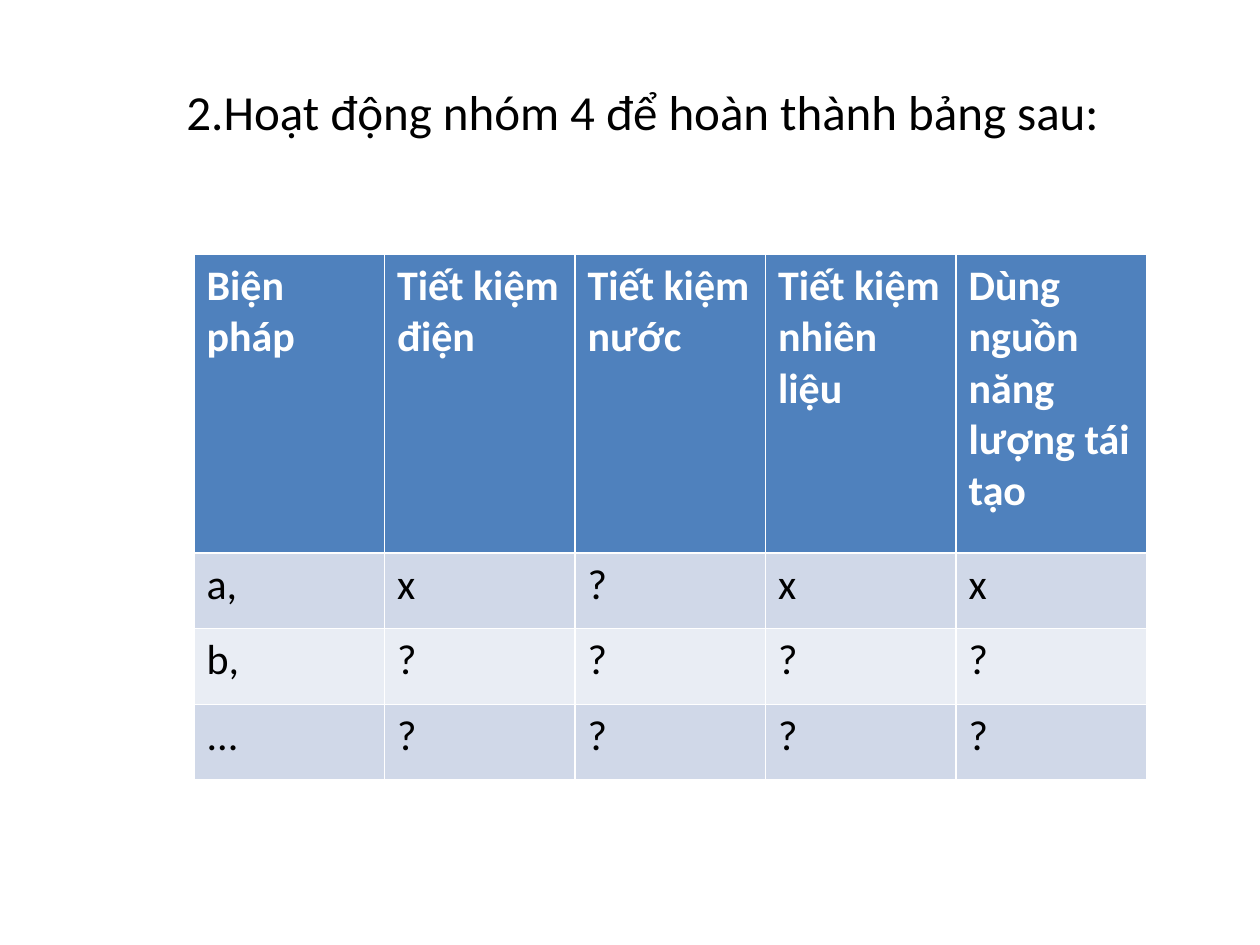
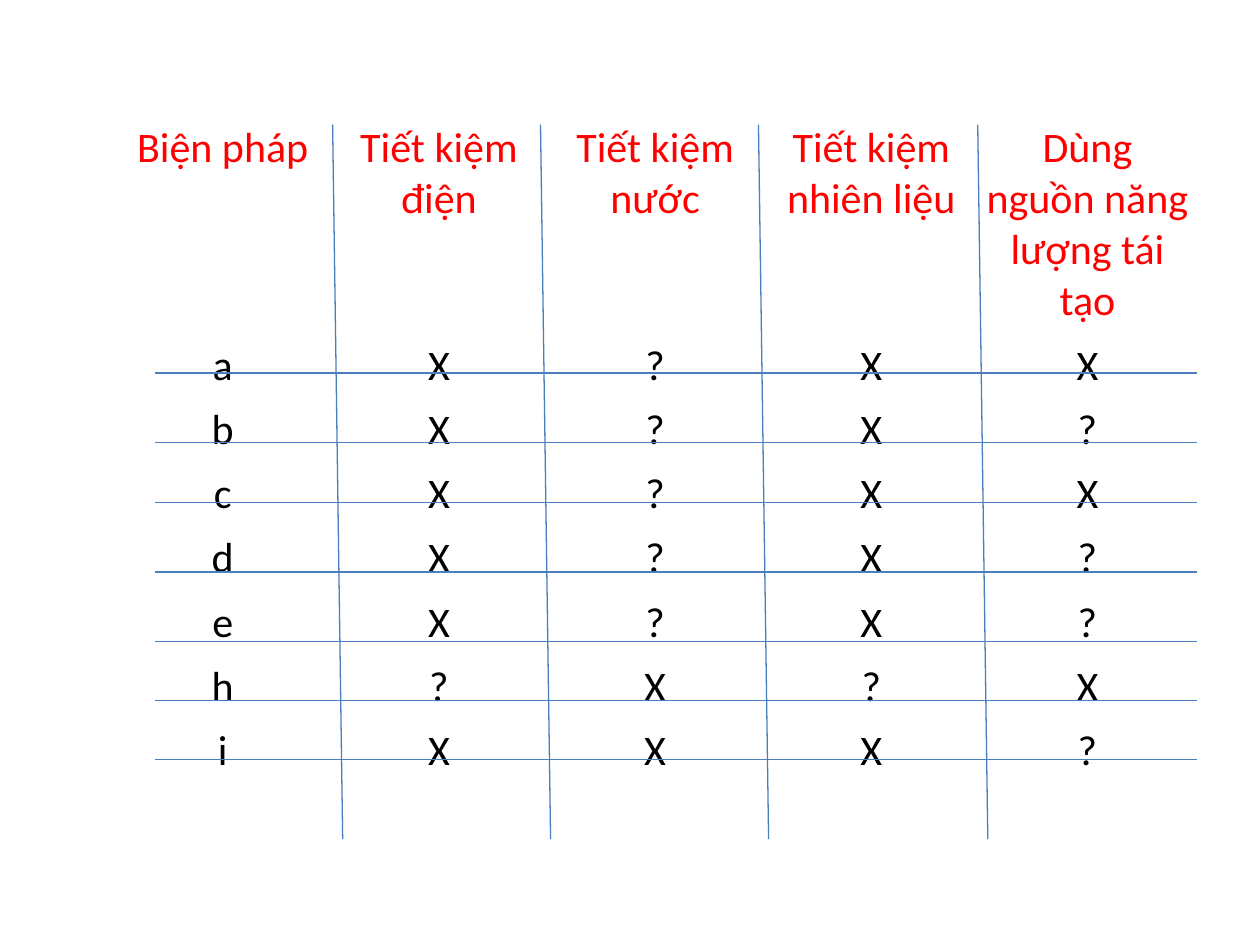
from dataclasses import dataclass
from typing import Any

import lxml.etree
import pptx
import pptx.dml.color
import pptx.enum.shapes
import pptx.enum.text
import pptx.oxml.ns
import pptx.util

WIDE, HIGH = pptx.util.Inches(10), pptx.util.Inches(7.5)
COLS, ROWS = 100, 75
ALIGN = pptx.enum.text.PP_ALIGN


@dataclass(frozen=True)
class Theme:
    font: str = "Calibri"
    head: float = 28
    body: float = 24
    rule: float = 0.75
    black: str = "000000"
    white: str = "FFFFFF"
    red: str = "FF0000"
    blue: str = "4F81BD"
    line: str = "4B7EBC"
    bands: tuple[str, str] = ("D0D8E8", "E9EDF4")


THEME = Theme()


@dataclass(frozen=True)
class Box:
    """Left, top, width and height in grid columns and rows."""
    left: float
    top: float
    width: float
    height: float


@dataclass(frozen=True)
class Line:
    """Start and end in grid columns and rows."""
    left: float
    top: float
    right: float
    base: float


@dataclass(frozen=True)
class Style:
    ink: str
    bold: bool
    fills: tuple[str, ...]


@dataclass(frozen=True)
class Chart:
    """A table: its cells, row heights, and looks of header and body."""
    box: Box
    cells: list[list[str]]
    first: float
    rest: float
    head: Style
    body: Style
    align: Any
    inset: dict[str, int]


def across(cols: float) -> int:
    return round(WIDE * cols / COLS)


def down(rows: float) -> int:
    return round(HIGH * rows / ROWS)


def apply(item: Any, values: dict[str, Any]) -> None:
    for name, value in values.items():
        setattr(item, name, value)


def shade(text: str) -> pptx.dml.color.RGBColor:
    return pptx.dml.color.RGBColor.from_string(text)


def write(frame: Any, text: str, size: float, ink: str, bold: bool, align: Any) -> None:
    """Fill a text frame; each line of text becomes a paragraph."""
    frame.text = text
    for para in frame.paragraphs:
        para.alignment = align
        for run in para.runs:
            apply(run.font, {"name": THEME.font, "size": pptx.util.Pt(size), "bold": bold})
            run.font.color.rgb = shade(ink)


def place(box: Box) -> dict[str, int]:
    return {"left": across(box.left), "top": down(box.top),
            "width": across(box.width), "height": down(box.height)}


def title(slide: Any, text: str, box: Box) -> None:
    shape = slide.shapes.title
    apply(shape, place(box))
    apply(shape.text_frame, {
        "word_wrap": True,
        "auto_size": pptx.enum.text.MSO_AUTO_SIZE.NONE,
        "vertical_anchor": pptx.enum.text.MSO_ANCHOR.TOP,
    })
    write(shape.text_frame, text, THEME.head, THEME.black, False, ALIGN.LEFT)


def table(slide: Any, chart: Chart) -> None:
    size = len(chart.cells), len(chart.cells[0])
    grid = slide.shapes.add_table(*size, **place(chart.box)).table
    for r, texts in enumerate(chart.cells):
        grid.rows[r].height = down(chart.rest if r else chart.first)
        style = chart.body if r else chart.head
        fill = style.fills[(r - 1) % len(style.fills)]
        for c, text in enumerate(texts):
            cell = grid.cell(r, c)
            apply(cell, chart.inset)
            cell.fill.solid()
            cell.fill.fore_color.rgb = shade(fill)
            write(cell.text_frame, text, THEME.body, style.ink, style.bold, chart.align)


def rule(slide: Any, line: Line) -> None:
    link = slide.shapes.add_connector(
        pptx.enum.shapes.MSO_CONNECTOR.STRAIGHT,
        across(line.left), down(line.top), across(line.right), down(line.base))
    link.line.color.rgb = shade(THEME.line)
    link.line.width = pptx.util.Pt(THEME.rule)
    lxml.etree.SubElement(link._element.spPr, pptx.oxml.ns.qn("a:effectLst"))


TOPICS = ["Biện pháp", "Tiết kiệm điện", "Tiết kiệm nước", "Tiết kiệm nhiên liệu"]

TASK = Chart(
    box=Box(15.4, 20.2, 75.6, 41.7),
    cells=[TOPICS + ["Dùng nguồn năng lượng tái tạo"],
           ["a,", *"x?xx"], ["b,", *"????"], ["...", *"????"]],
    first=23.7, rest=6,
    head=Style(THEME.white, True, (THEME.blue,)),
    body=Style(THEME.black, False, THEME.bands),
    align=ALIGN.LEFT, inset={})

EDGE = pptx.util.Inches(0.05)
REPLY = Chart(
    box=Box(9.1, 9.2, 85.8, 53),
    cells=[TOPICS + ["Dùng nguồn năng\nlượng tái tạo"],
           *map(list, ("aX?XX", "bX?X?", "cX?XX", "dX?X?", "eX?X?", "h?X?X", "iXXX?"))],
    first=17.3, rest=5.1,
    head=Style(THEME.red, False, (THEME.white,)),
    body=Style(THEME.black, False, (THEME.white,)),
    align=ALIGN.CENTER,
    inset={f"margin_{side}": EDGE for side in ("left", "top", "right", "bottom")})

SLANT = 0.8
RULES = [Line(12.3, y, 95, y) for y in (29.6, 35.1, 39.9, 45.4, 50.9, 55.6, 60.3)]
RULES += [Line(x, 9.9, x + SLANT, 66.6) for x in (26.4, 42.9, 60.2, 77.6)]


def main() -> None:
    deck = pptx.Presentation()
    apply(deck, {"slide_width": WIDE, "slide_height": HIGH})
    named, blank = deck.slide_layouts[5], deck.slide_layouts[6]

    task = deck.slides.add_slide(named)
    title(task, "2.Hoạt động nhóm 4 để hoàn thành bảng sau:", Box(13.8, 6, 81.1, 10.4))
    table(task, TASK)

    reply = deck.slides.add_slide(blank)
    table(reply, REPLY)
    for line in RULES:
        rule(reply, line)

    deck.save("out.pptx")


if __name__ == "__main__":
    main()
